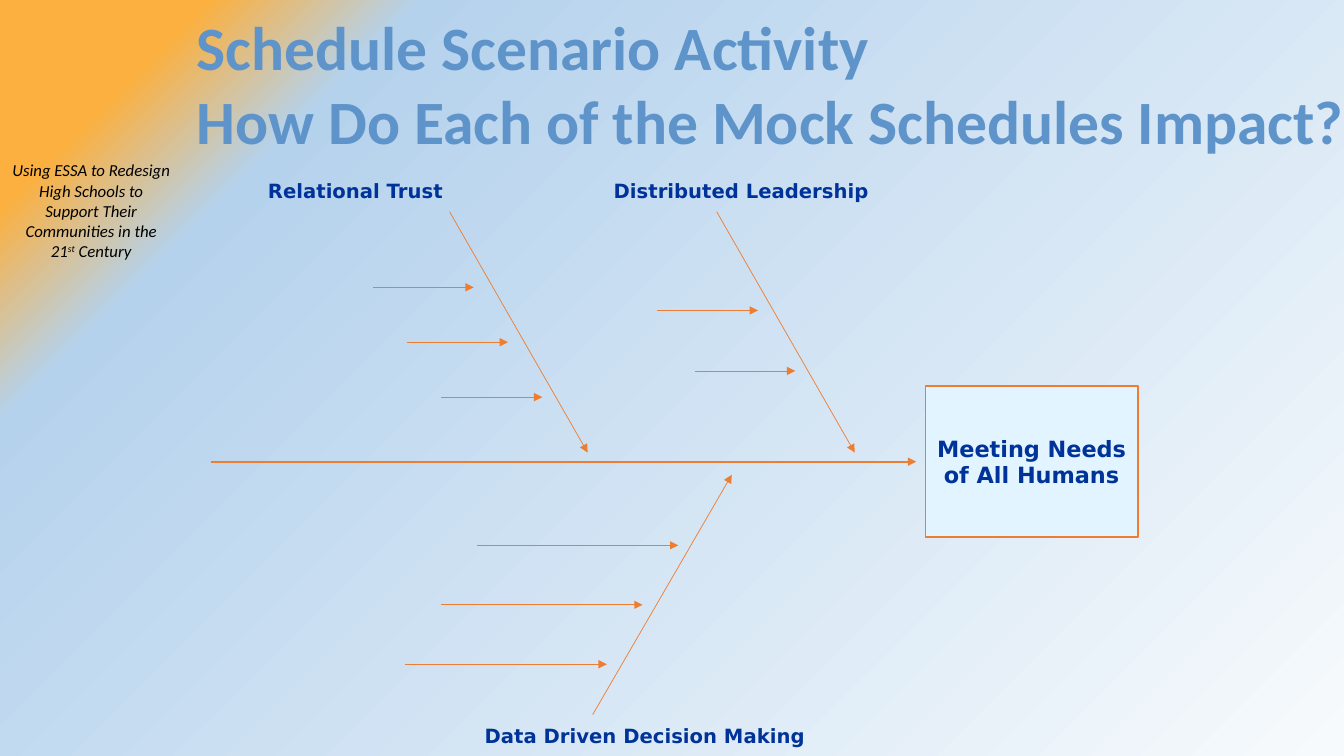
from lxml import etree
from pptx import Presentation
from pptx.dml.color import RGBColor
from pptx.enum.shapes import MSO_CONNECTOR, MSO_SHAPE
from pptx.enum.text import MSO_ANCHOR, MSO_AUTO_SIZE, PP_ALIGN
from pptx.oxml import parse_xml
from pptx.oxml.ns import nsdecls, qn
from pptx.util import Inches, Pt

LEFT, CENTER = PP_ALIGN.LEFT, PP_ALIGN.CENTER
TOP, MIDDLE = MSO_ANCHOR.TOP, MSO_ANCHOR.MIDDLE
NO_AUTO_SIZE = MSO_AUTO_SIZE.NONE
STRAIGHT = MSO_CONNECTOR.STRAIGHT
RECTANGLE = MSO_SHAPE.RECTANGLE
TITLE_ONLY = 5
COLUMNS, ROWS = 160, 90

GRADIENT_STOPS = [
    (0, "F7FAFD", 100),
    (80, "B5D2EC", 50),
    (90, "FBB040", 55),
    (100, "FBB040", 100),
]

BRANCHES = [
    {
        "label": "Relational Trust",
        "label_box": (30.72, 20.76, 38.28, 3.96),
        "start": (53.52, 25.2),
        "end": (69.96, 53.88),
        "first_cause": (44.4, 34.2),
        "cause_step": (4.08, 6.54),
        "cause_count": 3,
        "cause_length": 12,
    },
    {
        "label": "Distributed Leadership",
        "label_box": (71.88, 20.76, 33.24, 3.96),
        "start": (85.32, 25.2),
        "end": (101.76, 53.88),
        "first_cause": (78.24, 36.96),
        "cause_step": (4.44, 7.2),
        "cause_count": 2,
        "cause_length": 12,
    },
    {
        "label": "Data Driven Decision Making",
        "label_box": (56.52, 85.56, 41.16, 4.08),
        "start": (70.56, 85.08),
        "end": (87.12, 56.52),
        "first_cause": (56.76, 64.92),
        "cause_step": (-4.26, 7.08),
        "cause_count": 3,
        "cause_length": 24,
    },
]


def color(value):
    return RGBColor.from_string(value)


class FishboneSlide:
    heading_font = "Calibri"
    label_font = "DejaVu Sans"
    title_color = "5E94CA"
    label_color = "003399"
    line_color = "ED7D31"
    box_color = "E1F4FF"
    note_color = "000000"

    def __init__(self, presentation):
        self.column = presentation.slide_width / COLUMNS
        self.row = presentation.slide_height / ROWS
        self.slide = presentation.slides.add_slide(presentation.slide_layouts[TITLE_ONLY])

    def point(self, column, row):
        return round(column * self.column), round(row * self.row)

    def area(self, left, top, width, height):
        return *self.point(left, top), *self.point(width, height)

    def format_text(self, shape, size, font_name, font_color, alignment=LEFT,
                    anchor=TOP, bold=True, italic=False, wrap=True):
        frame = shape.text_frame
        frame.auto_size = NO_AUTO_SIZE
        frame.word_wrap = wrap
        frame.vertical_anchor = anchor
        for paragraph in frame.paragraphs:
            paragraph.alignment = alignment
            font = paragraph.font
            font.size = Pt(size)
            font.name = font_name
            font.bold = bold
            font.italic = italic
            font.color.rgb = color(font_color)

    def background(self, stops):
        fill = self.slide.background.fill
        fill.solid()
        gradient = parse_xml(
            f'<a:gradFill {nsdecls("a")} rotWithShape="1"><a:gsLst/>'
            '<a:path path="circle"><a:fillToRect l="100000" t="100000"/></a:path>'
            '</a:gradFill>'
        )
        stop_list = gradient.find(qn("a:gsLst"))
        for position, value, opacity in stops:
            stop = etree.SubElement(stop_list, qn("a:gs"), pos=str(position * 1000))
            stop_color = etree.SubElement(stop, qn("a:srgbClr"), val=value)
            if opacity < 100:
                etree.SubElement(stop_color, qn("a:alpha"), val=str(opacity * 1000))
        properties = next(self.slide.element.iter(qn("p:bgPr")))
        properties.replace(properties.find(qn("a:solidFill")), gradient)

    def title(self, text, area):
        shape = self.slide.shapes.title
        shape.left, shape.top, shape.width, shape.height = self.area(*area)
        shape.text_frame.text = text
        self.format_text(shape, 44, self.heading_font, self.title_color)

    def note(self, text, superscript, ending, area):
        shape = self.slide.shapes.add_textbox(*self.area(*area))
        paragraph = shape.text_frame.paragraphs[0]
        runs = [paragraph.add_run() for _ in range(3)]
        for run, content in zip(runs, (text, superscript, ending)):
            run.text = content
        runs[1].font._element.set("baseline", "30000")
        self.format_text(shape, 12, self.heading_font, self.note_color, CENTER,
                         bold=False, italic=True)

    def label(self, text, area):
        shape = self.slide.shapes.add_textbox(*self.area(*area))
        shape.text_frame.text = text
        self.format_text(shape, 14, self.label_font, self.label_color)

    def outcome(self, text, area):
        shape = self.slide.shapes.add_shape(RECTANGLE, *self.area(*area))
        shape.shadow.inherit = False
        shape.fill.solid()
        shape.fill.fore_color.rgb = color(self.box_color)
        shape.line.color.rgb = color(self.line_color)
        shape.line.width = Pt(1)
        shape.text_frame.text = text
        self.format_text(shape, 16, self.label_font, self.label_color, CENTER,
                         MIDDLE, wrap=False)

    def arrow(self, start, end, width=0.5):
        connector = self.slide.shapes.add_connector(
            STRAIGHT, *self.point(*start), *self.point(*end))
        connector.line.color.rgb = color(self.line_color)
        connector.line.width = Pt(width)
        properties = connector.element.spPr
        etree.SubElement(properties.find(qn("a:ln")), qn("a:tailEnd"), type="triangle")
        etree.SubElement(properties, qn("a:effectLst"))

    def branch(self, label, label_box, start, end, first_cause, cause_step,
               cause_count, cause_length):
        self.label(label, label_box)
        self.arrow(start, end)
        for index in range(cause_count):
            left = first_cause[0] + index * cause_step[0]
            top = first_cause[1] + index * cause_step[1]
            self.arrow((left, top), (left + cause_length, top))


def main():
    presentation = Presentation()
    presentation.slide_width = Inches(13.33)
    presentation.slide_height = Inches(7.5)
    fishbone = FishboneSlide(presentation)
    fishbone.background(GRADIENT_STOPS)
    fishbone.note(
        "Using ESSA to Redesign High Schools to Support Their Communities in the 21",
        "st", " Century", (0.24, 18.48, 21.24, 13.32))
    fishbone.title(
        "Schedule Scenario Activity\vHow Do Each of the Mock Schedules Impact?",
        (22.2, 0.48, 140.52, 18.96))
    fishbone.outcome("Meeting Needs\nof All Humans", (110.16, 45.96, 25.32, 18))
    fishbone.arrow((25.08, 54.96), (109.08, 54.96), 1.5)
    for branch in BRANCHES:
        fishbone.branch(**branch)
    presentation.save("out.pptx")


if __name__ == "__main__":
    main()
